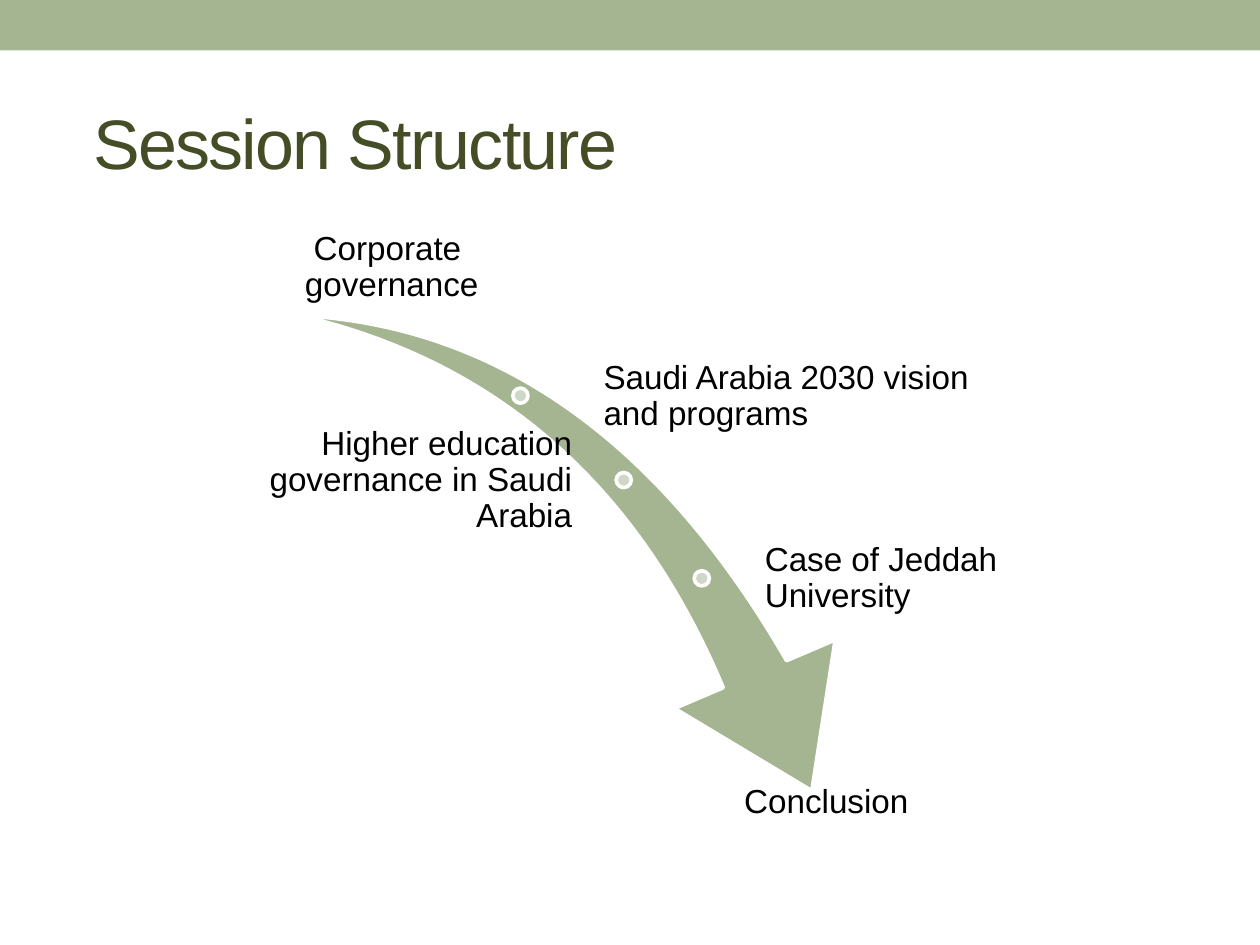
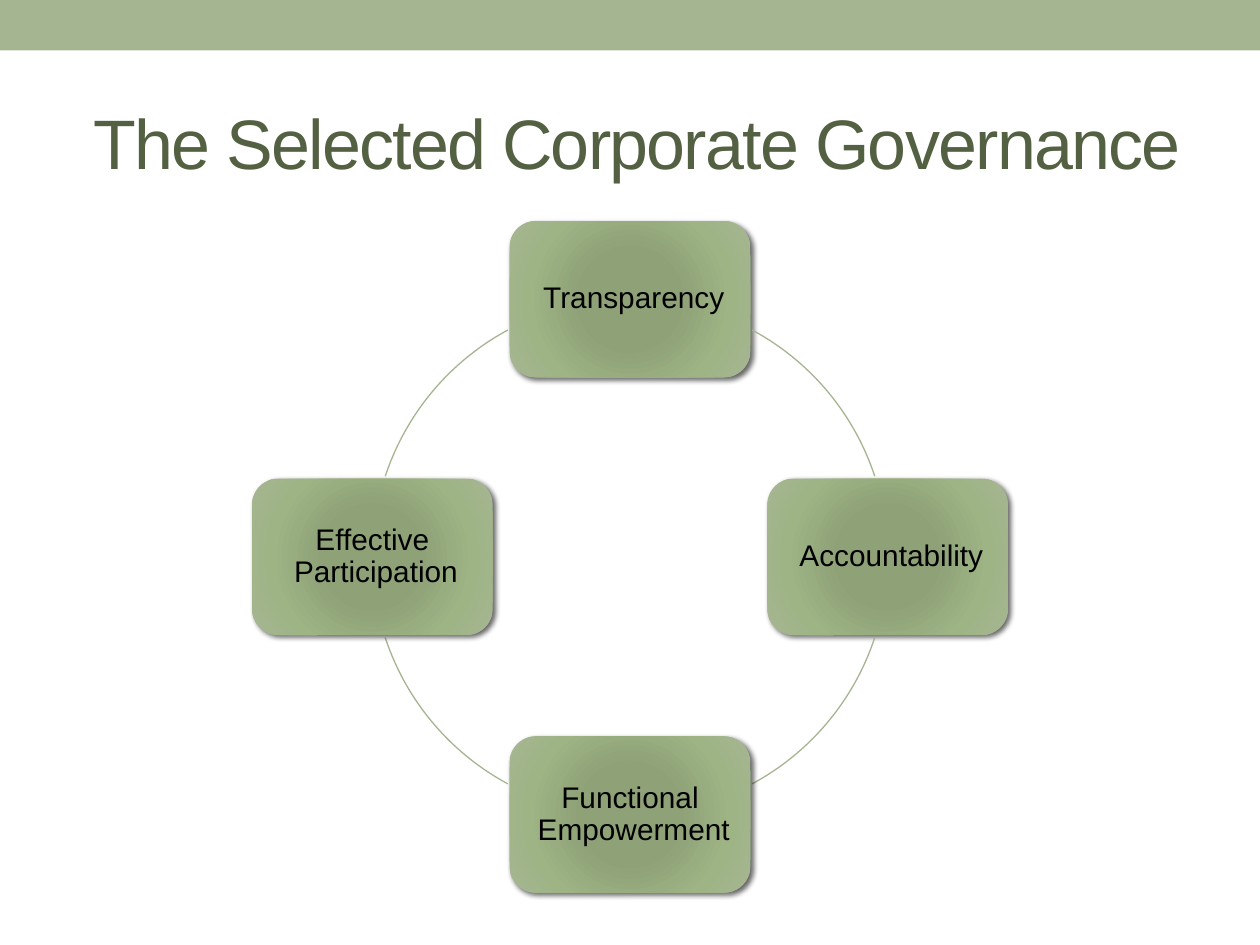
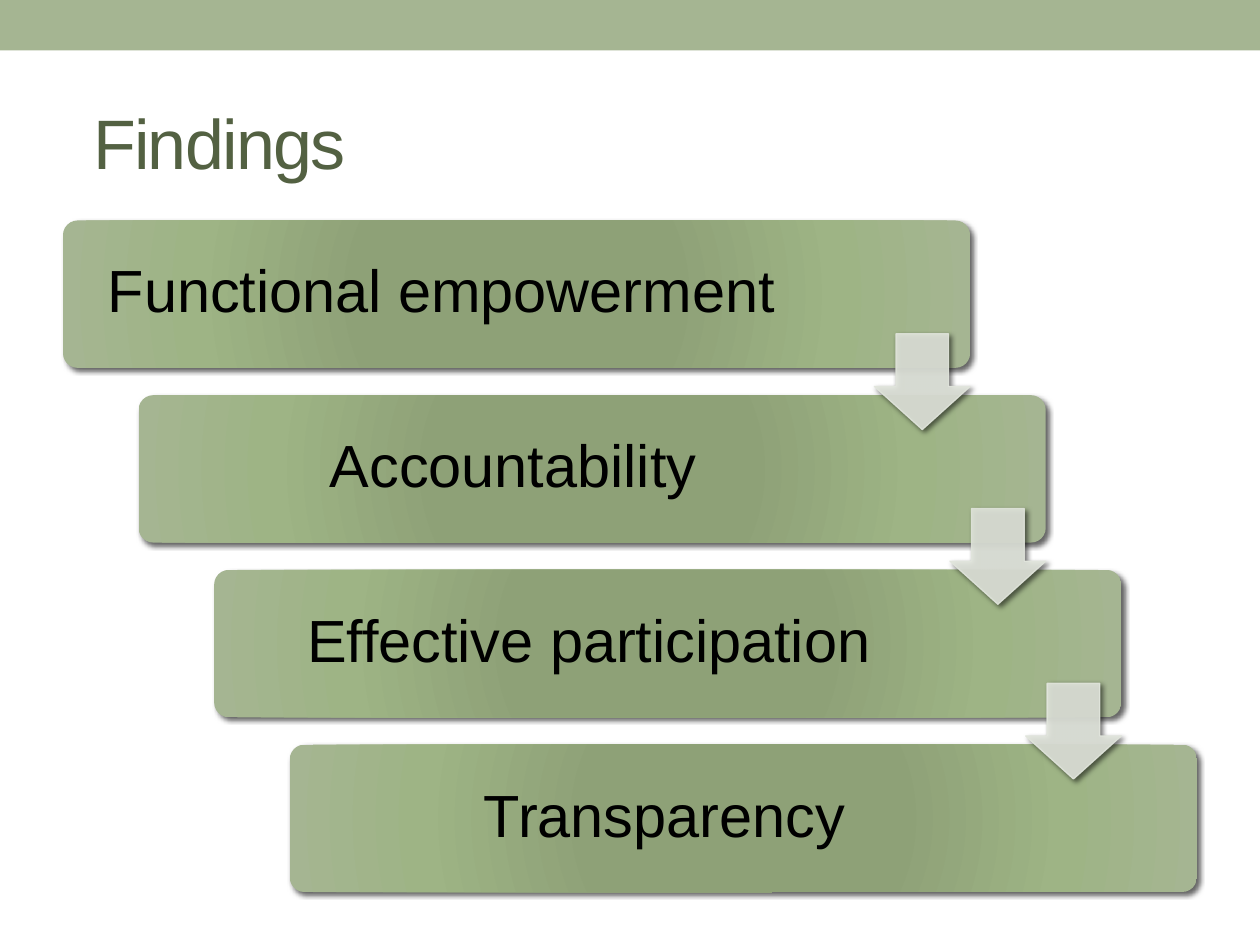
from lxml import etree
from pptx import Presentation
from pptx.dml.color import RGBColor
from pptx.enum import shapes, text
from pptx.oxml.ns import nsdecls, qn
from pptx.oxml import parse_xml
from pptx.util import Inches, Pt

FONT = "Arial"
COLORS = {
    "sage": "A5B592", "olive": "444D26", "moss": "536142", "dot": "CFD7C7",
    "arrow": "E1E5DC", "white": "FFFFFF", "black": "000000",
}
GRADIENT = [(0, "8EA276"), (34, "8EA177"), (70, "9EB485"), (100, "A5B592")]

LEFT, CENTER, RIGHT = text.PP_ALIGN.LEFT, text.PP_ALIGN.CENTER, text.PP_ALIGN.RIGHT
TOP, MIDDLE, BOTTOM = text.MSO_ANCHOR.TOP, text.MSO_ANCHOR.MIDDLE, text.MSO_ANCHOR.BOTTOM
MSO = shapes.MSO_SHAPE

TITLES = [("Session Structure", "olive"),
          ("The Selected Corporate Governance", "moss"),
          ("Findings", "moss")]
SESSIONS = [
    ("Corporate governance ", (1.95, 1.55, 2.25, 0.89), CENTER, BOTTOM),
    ("Saudi Arabia 2030 vision and programs", (4.76, 2.7, 3.29, 0.89), LEFT, MIDDLE),
    ("Higher education governance in Saudi Arabia", (1.95, 3.37, 2.62, 0.89), RIGHT, MIDDLE),
    ("Case of Jeddah University", (6.04, 4.15, 2.01, 0.89), LEFT, MIDDLE),
    ("Conclusion ", (5, 6.2, 3.05, 0.89), CENTER, TOP),
]
DOTS = [(4.07, 3.08), (4.89, 3.75), (5.51, 4.53)]
PRINCIPLES = [("Transparency ", 0, -1), ("Accountability ", 1, 0),
              ("Functional Empowerment ", 0, 1), ("Effective Participation ", -1, 0)]
ARCS = [(298.3, 341.75), (18.25, 61.7), (118.3, 161.75), (198.25, 241.7)]
FINDINGS = ["Functional empowerment ", "Accountability ",
            "Effective participation ", "Transparency "]


def rgb(name):
    return RGBColor.from_string(COLORS[name])


def add_shape(s, kind, box, fill=None, line=None, width=0.75, adj=()):
    sp = s.shapes.add_shape(kind, *map(Inches, box))
    sp.shadow.inherit = False
    for i, value in enumerate(adj):
        sp.adjustments[i] = value
    if fill:
        sp.fill.solid()
        sp.fill.fore_color.rgb = rgb(fill)
    else:
        sp.fill.background()
    if line:
        sp.line.color.rgb = rgb(line)
        sp.line.width = Pt(width)
    else:
        sp.line.fill.background()
    return sp


def add_text(s, words, box, size, color="black", align=CENTER, anchor=MIDDLE,
             inset=(0.03,) * 4, spacing=0.9, tracking=None):
    tf = s.shapes.add_textbox(*map(Inches, box)).text_frame
    tf.word_wrap = True
    tf.vertical_anchor = anchor
    tf.margin_left, tf.margin_top, tf.margin_right, tf.margin_bottom = map(Inches, inset)
    p = tf.paragraphs[0]
    p.alignment = align
    p.line_spacing = spacing
    p._p.get_or_add_pPr().set("rtl", "1")
    r = p.add_run()
    r.text = words
    r.font.name = FONT
    r.font.size = Pt(size)
    r.font.color.rgb = rgb(color)
    if tracking:
        r._r.get_or_add_rPr().set("spc", str(tracking))


def add_shadow(sp):
    effects = sp._element.spPr.find(qn("a:effectLst"))
    effects.append(parse_xml(
        f'<a:outerShdw {nsdecls("a")} blurRad="{Pt(3)}" dist="{Pt(2)}" dir="2700000" '
        f'algn="ctr" rotWithShape="0"><a:srgbClr val="{COLORS["black"]}">'
        '<a:alpha val="60000"/></a:srgbClr></a:outerShdw>'))


def add_card(s, box, adj=()):
    sp = add_shape(s, MSO.ROUNDED_RECTANGLE, box, adj=adj)
    stops = "".join(f'<a:gs pos="{pos * 1000}"><a:srgbClr val="{color}"/></a:gs>'
                    for pos, color in GRADIENT)
    spPr = sp._element.spPr
    spPr.replace(spPr.find(qn("a:noFill")), parse_xml(
        f'<a:gradFill {nsdecls("a")} rotWithShape="1"><a:gsLst>{stops}</a:gsLst>'
        '<a:path path="circle"><a:fillToRect l="100000" t="100000" r="100000" b="100000"/>'
        '</a:path></a:gradFill>'))
    add_shadow(sp)


def add_slide(prs, title, color):
    s = prs.slides.add_slide(prs.slide_layouts[6])
    add_shape(s, MSO.RECTANGLE, (0, 0, 10, 0.4), "sage")
    add_text(s, title, (0.5, 0.58, 9, 1.08), 40, color, LEFT,
             inset=(0.24, 0.05, 0.05, 0.05), spacing=1.0, tracking=-100)
    return s


def draw_sessions(s):
    swoosh = add_shape(s, MSO.SWOOSH_ARROW, (2.27, 2.65, 4.78, 3.33),
                       "sage", "white", 2.08, (0.163, 0.314))
    swoosh.rotation = 73.3
    for x, y in DOTS:
        add_shape(s, MSO.OVAL, (x, y, 0.12, 0.12), "dot", "white", 2.08)
    for words, box, align, anchor in SESSIONS:
        add_text(s, words, box, 19, align=align, anchor=anchor)


def draw_cycle(s):
    cx, cy, radius, w, h, pad = 5, 4.42, 2.045, 1.91, 1.24, 0.06
    for (words, dx, dy), arc in zip(PRINCIPLES, ARCS):
        x, y = cx + dx * radius - w / 2, cy + dy * radius - h / 2
        add_card(s, (x, y, w, h))
        add_text(s, words, (x + pad, y + pad, w - 2 * pad, h - 2 * pad), 17,
                 inset=(0.07,) * 4)
        add_shape(s, MSO.ARC, (cx - radius, cy - radius, 2 * radius, 2 * radius),
                  line="sage", adj=[degrees * 0.6 for degrees in arc])


def draw_steps(s):
    dx, dy = 0.6, 4.16 / 3
    for i, words in enumerate(FINDINGS):
        x, y = 0.5 + i * dx, 1.75 + i * dy
        add_card(s, (x, y, 7.2, 1.17), (0.1,))
        add_text(s, words, (x + 0.03, y + 0.03, 5.77 if i else 5.83, 1.1), 34,
                 inset=(0.14,) * 4)
    for i in range(len(FINDINGS) - 1):
        sp = add_shape(s, MSO.DOWN_ARROW, (6.94 + i * dx, 2.65 + i * dy, 0.76, 0.76),
                       "arrow", "arrow", adj=(0.55, 0.45))
        for clr in sp._element.spPr.findall(".//" + qn("a:srgbClr")):
            etree.SubElement(clr, qn("a:alpha")).set("val", "90000")
        add_shadow(sp)


def main():
    prs = Presentation()
    prs.slide_width, prs.slide_height = Inches(10), Inches(7.5)
    for (title, color), draw in zip(TITLES, (draw_sessions, draw_cycle, draw_steps)):
        draw(add_slide(prs, title, color))
    prs.save("out.pptx")


if __name__ == "__main__":
    main()
